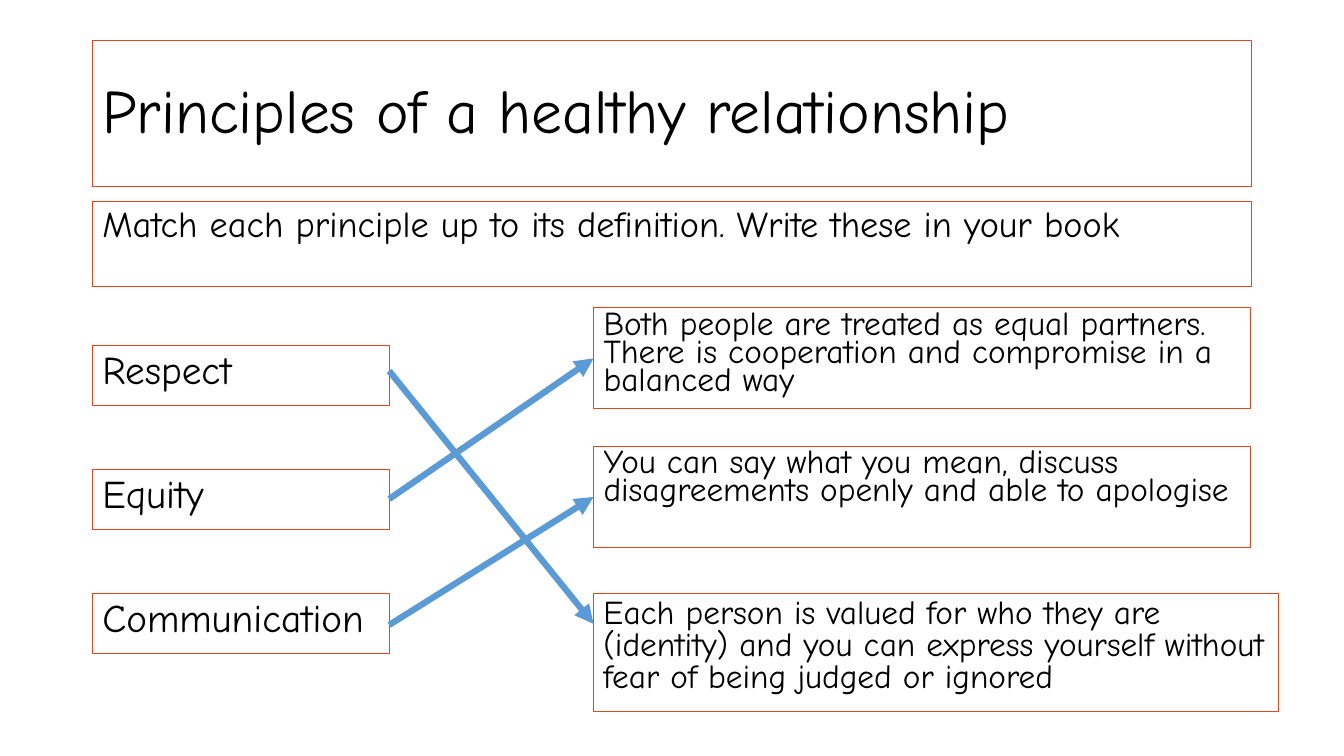
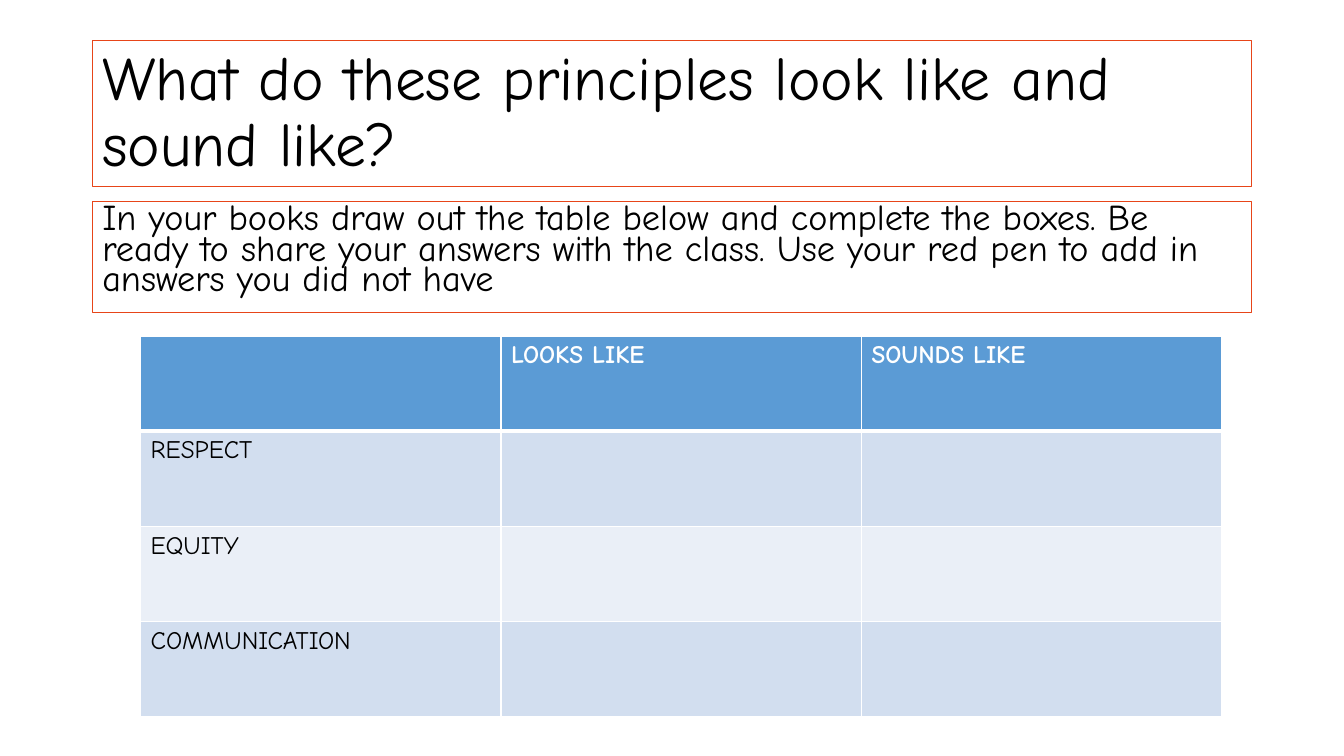
import lxml.etree
import pptx
import pptx.dml.color
import pptx.enum.shapes
import pptx.enum.text
import pptx.oxml.ns
import pptx.util

Pt = pptx.util.Pt
qn = pptx.oxml.ns.qn

FONT = "Comic Neue"
COLORS = {
    "text": "000000",
    "outline": "E74519",
    "accent": "5B9BD5",
    "white": "FFFFFF",
    "band_dark": "D2DEEF",
    "band_light": "EAEFF7",
}
LEFT = 66
CONTENT_WIDTH = 828

TERMS = ["Respect", "Equity", "Communication"]
# text, top, width, height, line spacing
DEFINITIONS = [
    ("Both people are treated as equal partners. There is cooperation and "
     "compromise in a balanced way", 220, 469.5, 72, 0.7),
    ("You can say what you mean, discuss disagreements openly and able to "
     "apologise", 319, 469.5, 72, 0.7),
    ("Each person is valued for who they are (identity) and you can express "
     "yourself without fear of being judged or ignored", 424, 489.5, 84, 0.8),
]
# start and end heights of each arrow, in the order of TERMS
MATCHES = [(265, 445.7), (356.4, 256), (446.4, 355)]


def rgb(name):
    return pptx.dml.color.RGBColor.from_string(COLORS[name])


def add_text(frame, text, size, color="text", bold=False):
    para = frame.paragraphs[0]
    span = para.add_run()
    span.text = text
    span.font.name = FONT
    span.font.size = Pt(size)
    span.font.bold = bold
    span.font.color.rgb = rgb(color)
    return para


def add_outlined_box(page, bounds, text, size, spacing=0.9, before=10):
    box = page.shapes.add_textbox(*map(Pt, bounds))
    box.line.color.rgb = rgb("outline")
    box.line.width = Pt(0.75)
    box.text_frame.word_wrap = True
    para = add_text(box.text_frame, text, size)
    para.line_spacing = spacing
    para.space_before = Pt(before)
    return box


def add_heading(page, title, task, task_height, task_spacing):
    box = add_outlined_box(page, (LEFT, 29, CONTENT_WIDTH, 104.4), title, 44, before=0)
    box.text_frame.vertical_anchor = pptx.enum.text.MSO_ANCHOR.MIDDLE
    add_outlined_box(page, (LEFT, 144, CONTENT_WIDTH, task_height),
                     task, 25.9, task_spacing)


def add_arrow(page, start, end):
    arrow = page.shapes.add_connector(
        pptx.enum.shapes.MSO_CONNECTOR.STRAIGHT, *map(Pt, start + end))
    arrow.line.color.rgb = rgb("accent")
    arrow.line.width = Pt(4.5)
    lxml.etree.SubElement(arrow.line._get_or_add_ln(), qn("a:tailEnd"), type="triangle")
    lxml.etree.SubElement(arrow._element.spPr, qn("a:effectLst"))


def add_matching(page, left, top):
    """Terms on the left, definitions on the right, arrows between them."""
    term_width, term_height, pitch = 212, 42.5, 88.6
    definition_left = left + 358
    for row, term in enumerate(TERMS):
        add_outlined_box(page, (left, top + row * pitch, term_width, term_height), term, 28)
    for text, box_top, width, height, spacing in DEFINITIONS:
        add_outlined_box(page, (definition_left, box_top, width, height),
                         text, 23.8, spacing)
    for start, end in MATCHES:
        add_arrow(page, (left + term_width, start), (definition_left, end))


def set_borders(cell, widths):
    """Draw white borders; widths are left, right, top, bottom."""
    properties = cell._tc.get_or_add_tcPr()
    for position, (side, width) in enumerate(zip("LRTB", widths)):
        line = lxml.etree.Element(qn("a:ln" + side), w=str(int(Pt(width))))
        fill = lxml.etree.SubElement(line, qn("a:solidFill"))
        lxml.etree.SubElement(fill, qn("a:srgbClr"), val=COLORS["white"])
        properties.insert(position, line)


def add_answer_table(page, left, top, width, height):
    rows = [["", "LOOKS LIKE", "SOUNDS LIKE"]]
    rows += [[term.upper(), "", ""] for term in TERMS]
    table = page.shapes.add_table(
        len(rows), len(rows[0]), *map(Pt, (left, top, width, height))).table
    table.horz_banding = False
    for r, texts in enumerate(rows):
        header = r == 0
        fill = "accent" if header else "band_dark" if r % 2 else "band_light"
        for c, text in enumerate(texts):
            cell = table.cell(r, c)
            cell.fill.solid()
            cell.fill.fore_color.rgb = rgb(fill)
            set_borders(cell, (1, 1, 3 if r == 1 else 1, 3 if header else 1))
            if text:
                add_text(cell.text_frame, text, 18, "white" if header else "text", header)


def build_matching_slide(page):
    add_heading(page, "Principles of a healthy relationship",
                "Match each principle up to its definition. Write these in your book",
                60.5, 0.9)
    add_matching(page, LEFT, 247)


def build_table_slide(page):
    add_heading(page, "What do these principles look like and sound like?",
                "In your books draw out the table below and complete the boxes. "
                "Be ready to share your answers with the class. Use your red pen "
                "to add in answers you did not have", 79.2, 0.7)
    add_answer_table(page, 100.4, 240, 772.5, 272)


def main():
    deck = pptx.Presentation()
    deck.slide_width, deck.slide_height = Pt(960), Pt(540)
    for build in (build_matching_slide, build_table_slide):
        build(deck.slides.add_slide(deck.slide_layouts[6]))
    deck.save("out.pptx")


if __name__ == "__main__":
    main()
